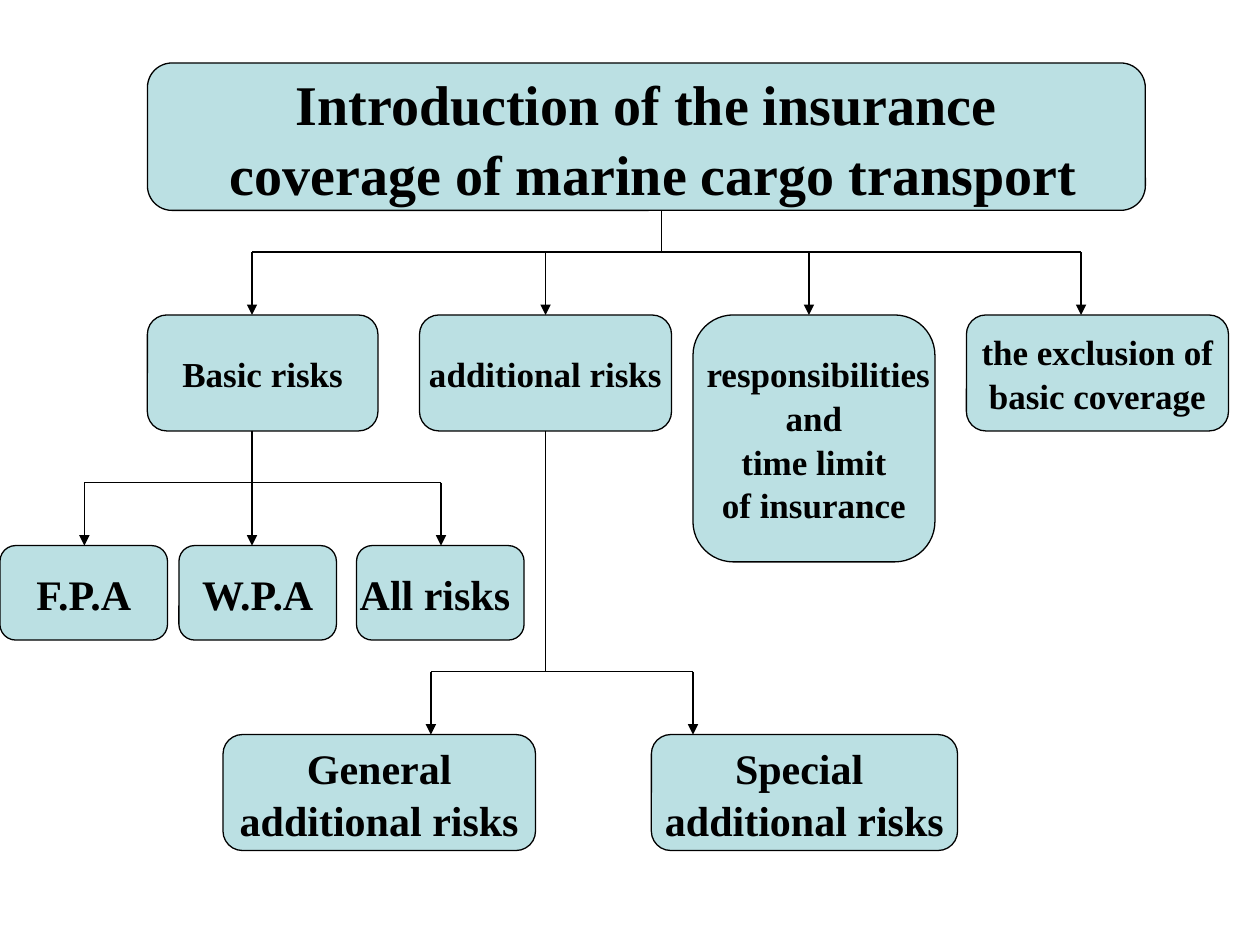
from collections import namedtuple
from dataclasses import dataclass

from lxml.etree import SubElement
from pptx import Presentation
from pptx.dml.color import RGBColor
from pptx.enum.shapes import MSO_CONNECTOR as Connector, MSO_SHAPE as Shape
from pptx.enum.text import MSO_ANCHOR as Anchor, PP_ALIGN as Align
from pptx.oxml.ns import qn
from pptx.util import Inches, Pt

Box = namedtuple("Box", "left top width height")
Node = namedtuple("Node", "left width height lines")


@dataclass(frozen=True)
class Theme:
    fill: RGBColor = RGBColor(0xBB, 0xE0, 0xE3)
    ink: RGBColor = RGBColor(0, 0, 0)
    font: str = "Times New Roman"
    title_size: int = 32
    category_size: int = 20
    kind_size: int = 24
    line_width: float = 0.75
    line_spacing: float = 1.04


THEME = Theme()


def add_node(slide, box, lines, size):
    shape = slide.shapes.add_shape(Shape.ROUNDED_RECTANGLE, *map(Inches, box))
    shape.shadow.inherit = False
    shape.fill.solid()
    shape.fill.fore_color.rgb = THEME.fill
    shape.line.color.rgb = THEME.ink
    shape.line.width = Pt(THEME.line_width)
    frame = shape.text_frame
    frame.word_wrap = False
    frame.vertical_anchor = Anchor.MIDDLE
    for index, line in enumerate(lines):
        paragraph = frame.add_paragraph() if index else frame.paragraphs[0]
        paragraph.alignment = Align.CENTER
        paragraph.line_spacing = THEME.line_spacing
        run = paragraph.add_run()
        run.text = line
        run.font.name = THEME.font
        run.font.size = Pt(size)
        run.font.bold = True
        run.font.color.rgb = THEME.ink


def add_line(slide, start, end, arrow=False):
    line = slide.shapes.add_connector(
        Connector.STRAIGHT, *map(Inches, (*start, *end))
    )
    line.line.color.rgb = THEME.ink
    line.line.width = Pt(THEME.line_width)
    if arrow:
        SubElement(line.line._get_or_add_ln(), qn("a:tailEnd"), type="triangle")
    SubElement(line._element.spPr, qn("a:effectLst"))


def add_branch(slide, box, stem, arrows):
    bus = box.top + box.height - 0.5
    add_line(slide, (box.left + stem, box.top), (box.left + stem, bus))
    add_line(slide, (box.left + arrows[0], bus), (box.left + arrows[-1], bus))
    for arrow in arrows:
        x = box.left + arrow
        add_line(slide, (x, bus), (x, box.top + box.height), arrow=True)


def add_row(slide, box, nodes, size):
    for node in nodes:
        place = Box(box.left + node.left, box.top, node.width, node.height)
        add_node(slide, place, node.lines, size)


def add_title(slide, box):
    lines = ["Introduction of the insurance", " coverage of marine cargo transport"]
    add_node(slide, box, lines, THEME.title_size)


def add_categories(slide, box):
    add_branch(slide, Box(box.left, box.top, box.width, 0.83), 4.08,
               [0.83, 3.16, 5.25, 7.41])
    nodes = [
        Node(0, 1.83, 0.92, ["Basic risks"]),
        Node(2.16, 2, 0.92, [" additional risks "]),
        Node(4.33, 1.92, 1.96,
             [" responsibilities", " and ", "time limit", " of insurance "]),
        Node(6.5, 2.08, 0.92, ["the exclusion of", " basic coverage "]),
    ]
    add_row(slide, box._replace(top=box.top + 0.83), nodes, THEME.category_size)


def add_basic_risks(slide, box):
    add_branch(slide, Box(box.left, box.top, box.width, 0.91), 2, [0.67, 2, 3.5])
    nodes = [
        Node(0, 1.33, 0.75, ["F.P.A"]),
        Node(1.42, 1.25, 0.75, ["W.P.A"]),
        Node(2.83, 1.33, 0.75, ["All risks "]),
    ]
    add_row(slide, box._replace(top=box.top + 0.91), nodes, THEME.kind_size)


def add_additional_risks(slide, box):
    add_branch(slide, Box(box.left, box.top, box.width, 2.41), 2.56, [1.65, 3.73])
    nodes = [
        Node(0, 2.48, 0.92, ["General", " additional risks "]),
        Node(3.4, 2.43, 0.92, ["Special ", "additional risks"]),
    ]
    add_row(slide, box._replace(top=box.top + 2.41), nodes, THEME.kind_size)


def main():
    presentation = Presentation()
    presentation.slide_width = Inches(10)
    presentation.slide_height = Inches(7.5)
    slide = presentation.slides.add_slide(presentation.slide_layouts[6])
    add_title(slide, Box(1.17, 0.5, 7.92, 1.17))
    add_categories(slide, Box(1.17, 1.67, 8.58, 2.79))
    add_basic_risks(slide, Box(0, 3.42, 4.16, 1.66))
    add_additional_risks(slide, Box(1.77, 3.42, 5.83, 3.33))
    presentation.save("out.pptx")


if __name__ == "__main__":
    main()
